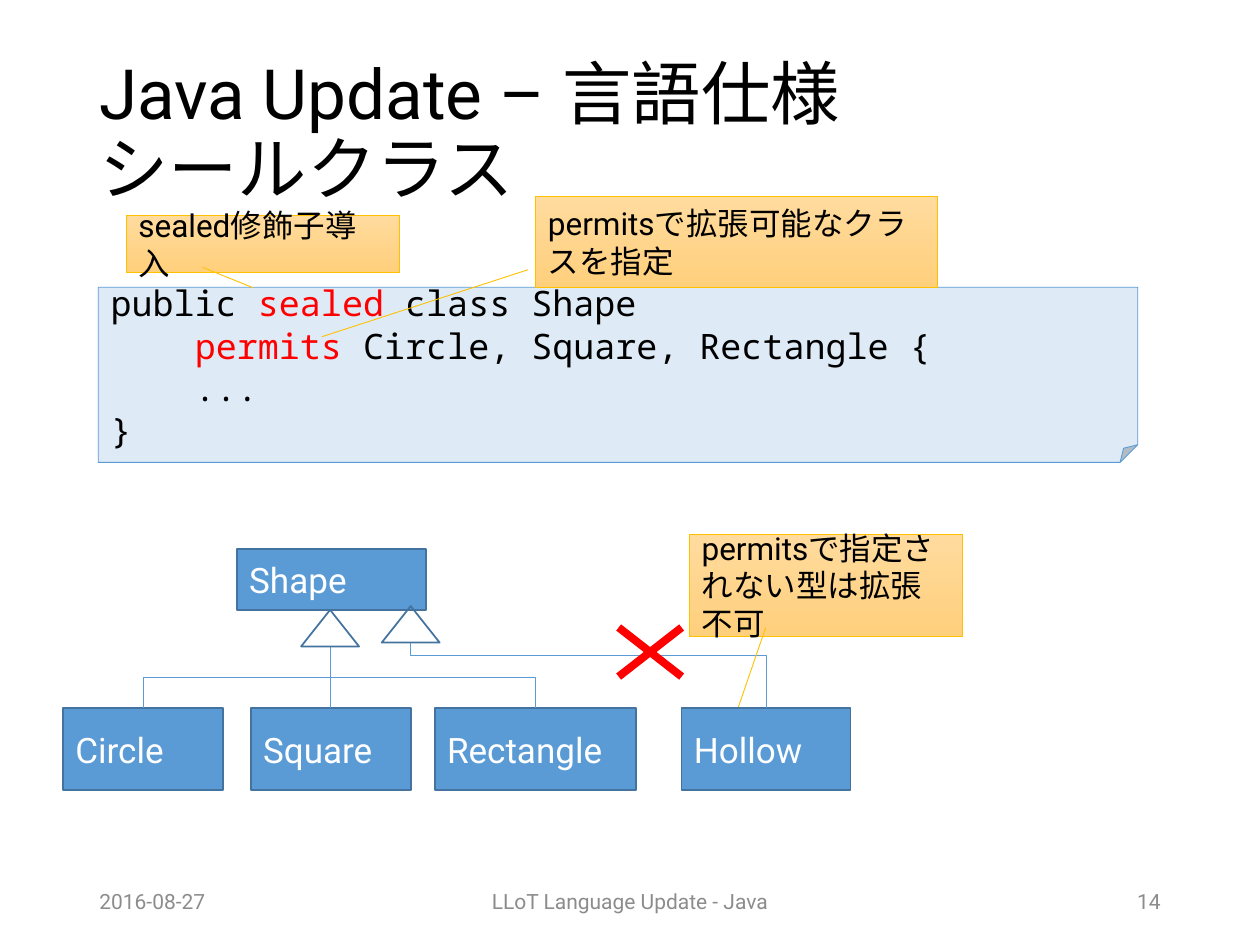
from lxml import etree
from pptx import Presentation
from pptx.dml.color import RGBColor
from pptx.enum.shapes import MSO_CONNECTOR, MSO_SHAPE
from pptx.enum.text import MSO_ANCHOR, PP_ALIGN
from pptx.oxml.ns import qn
from pptx.util import Inches, Pt

STRAIGHT, ELBOW = MSO_CONNECTOR.STRAIGHT, MSO_CONNECTOR.ELBOW
RECTANGLE, TRIANGLE = MSO_SHAPE.RECTANGLE, MSO_SHAPE.ISOSCELES_TRIANGLE
NOTE, CALLOUT = MSO_SHAPE.FOLDED_CORNER, MSO_SHAPE.LINE_CALLOUT_1
LEFT, CENTER, RIGHT = PP_ALIGN.LEFT, PP_ALIGN.CENTER, PP_ALIGN.RIGHT
MIDDLE = MSO_ANCHOR.MIDDLE

COLORS = {
    "black": "000000", "white": "FFFFFF", "footer": "8C8C8C", "red": "FF0000",
    "note": "DEEBF7", "blue": "5B9BD5", "outline": "43739E",
    "callout_top": "FFDB9E", "callout_bottom": "FFD07C", "callout_line": "FFC000",
}
SANS, MONO = "Roboto", "Noto Sans Mono"

# Content: boxes are (left, top, width, height) in inches
TITLE = ["Java Update – 言語仕様", "シールクラス"]
TITLE_BOX = (0.69, 0.4, 8.62, 1.34)
FOOTERS = [
    ("2016-08-27", 0.69, 2.25, LEFT),
    ("LLoT Language Update - Java", 3.31, 3.38, CENTER),
    ("14", 7.06, 2.25, RIGHT),
]
CODE_BOX = (0.78, 2.28, 8.25, 1.39)
CODE = [
    [("public ", "black"), ("sealed", "red"), (" class Shape", "black")],
    [("    ", "black"), ("permits", "red"), (" Circle, Square, Rectangle {", "black")],
    [("    ...", "black")],
    [("}", "black")],
]
CALLOUTS = [  # text, box, pointer as (y, x) start and end in percent of the box
    ("sealed修飾子導入", (1, 1.71, 2.17, 0.45), (91.4, 28, 127.6, 46.5)),
    ("permitsで拡張可能なクラスを指定", (4.25, 1.56, 3.19, 0.72), (80.7, -1.9, 154.6, -53.2)),
    ("permitsで指定されない型は拡張不可", (5.47, 4.24, 2.17, 0.81), (91.4, 28, 169.3, 18)),
]
PARENT = ("Shape", (1.88, 4.36, 1.5, 0.48))
CHILD_TOP, CHILD_HEIGHT = 5.62, 0.65
TRIANGLE_SIZE = (0.46, 0.29)
ALLOWED = {"apex": (2.62, 4.84), "bend": 50,
           "children": [("Circle", 0.5, 1.27), ("Square", 1.99, 1.27), ("Rectangle", 3.45, 1.6)]}
FORBIDDEN = {"apex": (3.26, 4.81), "bend": 80, "children": [("Hollow", 5.41, 1.34)]}
CROSS = (4.91, 4.98, 5.41, 5.37)  # left, top, right, bottom

presentation = Presentation()
presentation.slide_width, presentation.slide_height = Inches(10), Inches(7.5)
slide = presentation.slides.add_slide(presentation.slide_layouts[6])


def color(name):
    return RGBColor.from_string(COLORS[name])


def add_run(paragraph, text, size, color_name, font=SANS):
    run = paragraph.add_run()
    run.text = text
    run.font.size, run.font.name = Pt(size), font
    run.font.color.rgb = color(color_name)


def prepare_text(shape, alignment=LEFT):
    frame = shape.text_frame
    frame.word_wrap, frame.vertical_anchor = True, MIDDLE
    frame.paragraphs[0].alignment = alignment
    return frame.paragraphs[0]


def add_text_box(box, alignment=LEFT):
    return prepare_text(slide.shapes.add_textbox(*map(Inches, box)), alignment)


def set_guides(shape, **percentages):
    """Set the named adjustment guides of a preset outline."""
    geometry = shape._element.spPr.find(qn("a:prstGeom"))
    guides = geometry.find(qn("a:avLst"))
    if guides is None:
        guides = etree.SubElement(geometry, qn("a:avLst"))
    for guide in list(guides):
        guides.remove(guide)
    for name, percentage in percentages.items():
        etree.SubElement(guides, qn("a:gd"), name=name, fmla=f"val {round(percentage * 1000)}")


def add_shape(kind, box, fill, line, line_width):
    shape = slide.shapes.add_shape(kind, *map(Inches, box))
    shape.shadow.inherit = False
    if fill:
        shape.fill.solid()
        shape.fill.fore_color.rgb = color(fill)
    else:
        shape.fill.background()
    shape.line.color.rgb, shape.line.width = color(line), Pt(line_width)
    return shape


def add_class(name, box):
    shape = add_shape(RECTANGLE, box, "blue", "outline", 1)
    add_run(prepare_text(shape), name, 20, "white")


def add_line(kind, points, color_name, width):
    connector = slide.shapes.add_connector(kind, *map(Inches, points))
    connector.line.color.rgb, connector.line.width = color(color_name), Pt(width)
    etree.SubElement(connector._element.spPr, qn("a:effectLst"))
    return connector


def add_rising_elbow(start_x, start_y, end_x, end_y, bend):
    """An elbow that leaves upwards: a sideways elbow turned by 270 degrees."""
    center_x, center_y = (start_x + end_x) / 2, (start_y + end_y) / 2
    half_rise, half_run = (start_y - end_y) / 2, (start_x - end_x) / 2
    connector = add_line(ELBOW, (center_x - half_rise, center_y + half_run,
                                 center_x + half_rise, center_y - half_run), "blue", 0.5)
    connector._element.spPr.find(qn("a:xfrm")).set("rot", str(270 * 60000))
    set_guides(connector, adj1=bend)


def add_inheritance(apex, bend, children):
    apex_x, apex_y = apex
    width, height = TRIANGLE_SIZE
    for name, left, child_width in children:
        add_class(name, (left, CHILD_TOP, child_width, CHILD_HEIGHT))
        add_rising_elbow(left + child_width / 2, CHILD_TOP, apex_x, apex_y + height, bend)
    add_shape(TRIANGLE, (apex_x - width / 2, apex_y, width, height), None, "outline", 1)


# Title and footers
title = add_text_box(TITLE_BOX)
title.line_spacing = 0.9
for index, text in enumerate(TITLE):
    if index:
        title.add_line_break()
    add_run(title, text, 39.6, "black")
for text, left, width, alignment in FOOTERS:
    add_run(add_text_box((left, 6.95, width, 0.4), alignment), text, 12, "footer")

# Code note
note = add_shape(NOTE, CODE_BOX, "note", "blue", 0.5)
set_guides(note, adj=10.1)
paragraph = prepare_text(note)
for index, runs in enumerate(CODE):
    if index:
        paragraph = note.text_frame.add_paragraph()
        paragraph.alignment = LEFT
    for text, color_name in runs:
        add_run(paragraph, text, 20, color_name, MONO)

# Class diagram
add_class(*PARENT)
add_inheritance(**ALLOWED)
add_inheritance(**FORBIDDEN)

# Red cross over the forbidden inheritance
left, top, right, bottom = CROSS
for start_y, end_y in ((top, bottom), (bottom, top)):
    add_line(STRAIGHT, (left, start_y, right, end_y), "red", 4.5)

# Callouts
for text, box, pointer in CALLOUTS:
    callout = add_shape(CALLOUT, box, None, "callout_line", 0.5)
    callout.fill.gradient()
    callout.fill.gradient_angle = 270
    for stop, name in zip(callout.fill.gradient_stops, ("callout_top", "callout_bottom")):
        stop.color.rgb = color(name)
    set_guides(callout, **{f"adj{number}": value for number, value in enumerate(pointer, 1)})
    add_run(prepare_text(callout), text, 18, "black")

presentation.save("out.pptx")
